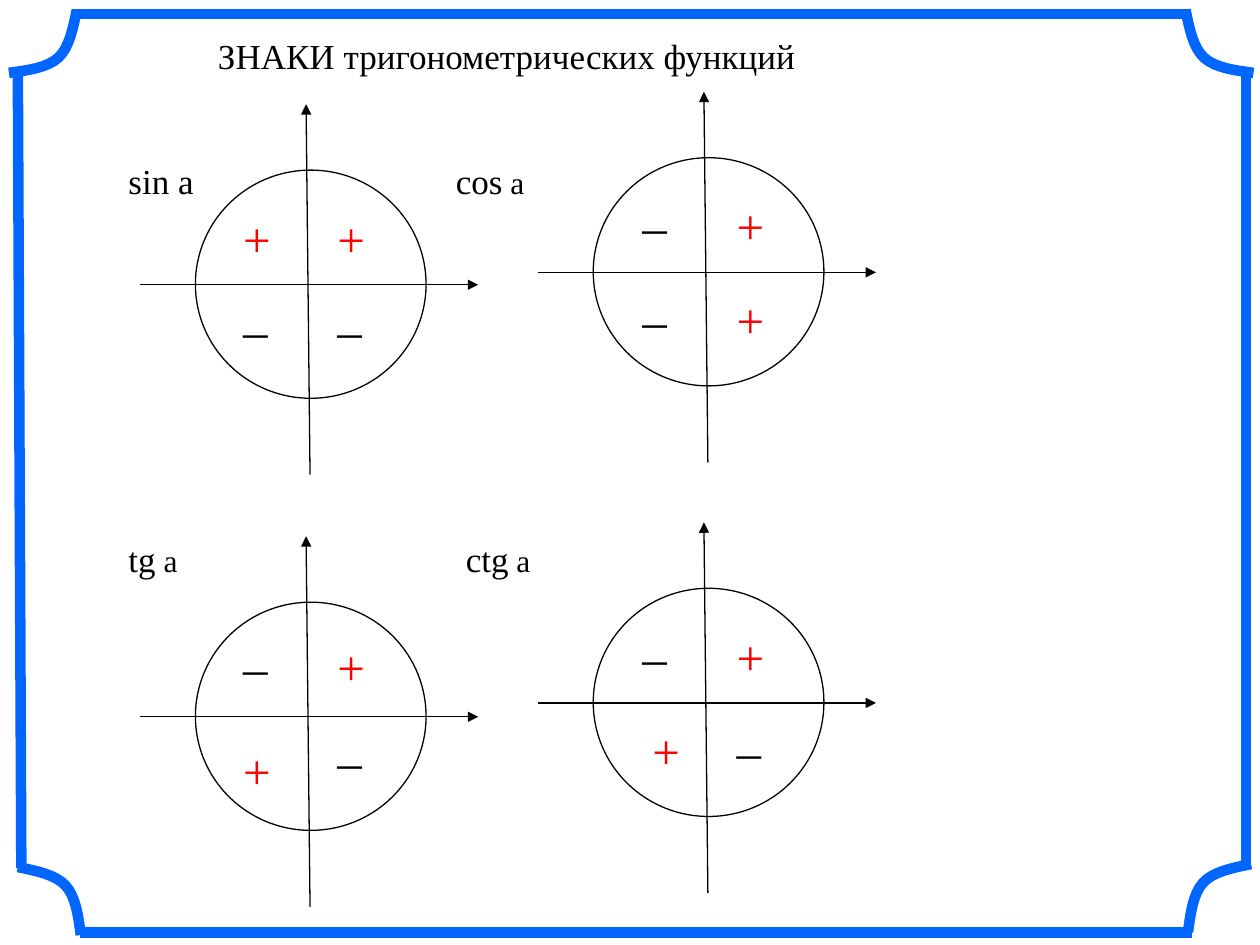
from pptx import Presentation
from pptx.dml.color import RGBColor
from pptx.enum.shapes import MSO_CONNECTOR, MSO_SHAPE
from pptx.enum.text import MSO_ANCHOR, PP_ALIGN
from pptx.oxml.ns import qn
from pptx.util import Cm, Pt
from lxml import etree

BLACK = RGBColor(0, 0, 0)
WHITE = RGBColor(255, 255, 255)
RED = RGBColor(255, 0, 0)
BLUE = RGBColor(0, 0x66, 255)
STRAIGHT = MSO_CONNECTOR.STRAIGHT
OVAL = MSO_SHAPE.OVAL
TOP = MSO_ANCHOR.TOP
CENTER = PP_ALIGN.CENTER

# Two joined cubic curves, as offsets in cm from the corner's first point
BEND = [(0, 0), (0.38, 0.08), (0.76, 0.15), (0.97, 0.38),
        (1.17, 0.61), (1.22, 0.99), (1.27, 1.37)]
STEPS = 8

SIDES = [(1.5, 0.28, 24, 0.28), (1.62, 18.8, 24.03, 18.8),
         (25.12, 1.5, 25.12, 17.5), (0.36, 1.5, 0.43, 17.5)]
# Start point, horizontal direction, axes swapped
CORNERS = [(0.36, 17.48, 1, False), (25.22, 17.42, -1, False),
           (23.9, 0.2, 1, True), (1.55, 0.2, -1, True)]

# Circle corner, sign columns, sign rows, signs by row, shift of the third sign
DIALS = [
    ((3.94, 3.43), (4.65, 6.55), (4.07, 5.92), "++––", (0, 0)),
    ((11.96, 3.18), (12.7, 14.6), (3.81, 5.72), "–+–+", (0, 0)),
    ((3.94, 12.14), (4.65, 6.55), (12.7, 14.6), "–++–", (0, 0.2)),
    ((11.96, 11.86), (12.7, 14.6), (12.5, 14.4), "–++–", (0.2, 0)),
]
LABELS = [(2.34, 3.1, "sin", 20), (8.94, 3.1, "cos", 18),
          (2.34, 10.72, "tg", 18), (9.14, 10.72, "ctg", 18)]


def cubic(ends, t):
    """Point at t on the cubic curve with four control points."""
    u = 1 - t
    parts = (u ** 3, 3 * u * u * t, 3 * u * t * t, t ** 3)
    return tuple(sum(k * p[i] for k, p in zip(parts, ends)) for i in (0, 1))


class Board:
    def __init__(self, slide, font="Times New Roman"):
        self.slide = slide
        self.font = font

    def fill_in(self, frame, runs, color=BLACK):
        """Add the runs to the first paragraph and return it."""
        para = frame.paragraphs[0]
        for text, size in runs:
            run = para.add_run()
            run.text = text
            run.font.name = self.font
            run.font.size = Pt(size)
            run.font.color.rgb = color
        return para

    def title(self, text):
        box = self.slide.shapes.title
        box.left, box.top = Cm(2.34), Cm(0.56)
        box.width, box.height = Cm(15.75), Cm(1.2)
        box.text_frame.vertical_anchor = TOP
        self.fill_in(box.text_frame, [(text, 20)]).alignment = CENTER

    def text(self, x, y, w, h, runs, color=BLACK):
        box = self.slide.shapes.add_textbox(Cm(x), Cm(y), Cm(w), Cm(h))
        box.text_frame.word_wrap = False
        self.fill_in(box.text_frame, runs, color)

    def line(self, x1, y1, x2, y2, color=BLACK, width=0.75, arrow=False):
        line = self.slide.shapes.add_connector(
            STRAIGHT, Cm(x1), Cm(y1), Cm(x2), Cm(y2))
        line.line.color.rgb = color
        line.line.width = Pt(width)
        props = line._element.spPr
        if arrow:
            etree.SubElement(props.find(qn("a:ln")), qn("a:tailEnd"),
                             type="triangle")
        etree.SubElement(props, qn("a:effectLst"))

    def corner(self, x, y, way, swap):
        bend = [(b, a) for a, b in BEND] if swap else BEND
        spots = [cubic(bend[i:i + 4], n / STEPS)
                 for i in (0, 3) for n in range(1, STEPS + 1)]
        form = self.slide.shapes.build_freeform(Cm(x), Cm(y))
        form.add_line_segments(
            [(Cm(x + way * a), Cm(y + b)) for a, b in spots], close=False)
        curve = form.convert_to_shape()
        curve.fill.background()
        curve.line.color.rgb = BLUE
        curve.line.width = Pt(6)
        curve.shadow.inherit = False

    def circle(self, x, y, w, h):
        disc = self.slide.shapes.add_shape(OVAL, Cm(x), Cm(y), Cm(w), Cm(h))
        disc.fill.solid()
        disc.fill.fore_color.rgb = WHITE
        disc.line.color.rgb = BLACK
        disc.line.width = Pt(0.75)
        disc.shadow.inherit = False

    def dial(self, spot, cols, rows, signs, shift):
        """Circle with two axes and a sign in each quarter."""
        x, y = spot
        self.circle(x, y, 4.65, 4.6)
        self.line(x - 1.12, y + 2.31, x + 5.7, y + 2.31, arrow=True)
        self.line(x + 2.31, y + 6.14, x + 2.23, y - 1.33, arrow=True)
        for i, sign in enumerate(signs):
            dx, dy = shift if i == 2 else (0, 0)
            self.text(cols[i % 2] + dx, rows[i // 2] + dy, 1.08, 1.45,
                      [(sign, 28)], RED if sign == "+" else BLACK)


def main():
    deck = Presentation()
    deck.slide_width, deck.slide_height = Cm(25.4), Cm(19.05)
    board = Board(deck.slides.add_slide(deck.slide_layouts[5]))
    for side in SIDES:
        board.line(*side, color=BLUE, width=6)
    for corner in CORNERS:
        board.corner(*corner)
    board.title("ЗНАКИ тригонометрических функций")
    for x, y, name, size in LABELS:
        board.text(x, y, 2.2, 1.07, [(name, 20), (" a", size)])
    for dial in DIALS:
        board.dial(*dial)
    deck.save("out.pptx")


if __name__ == "__main__":
    main()
